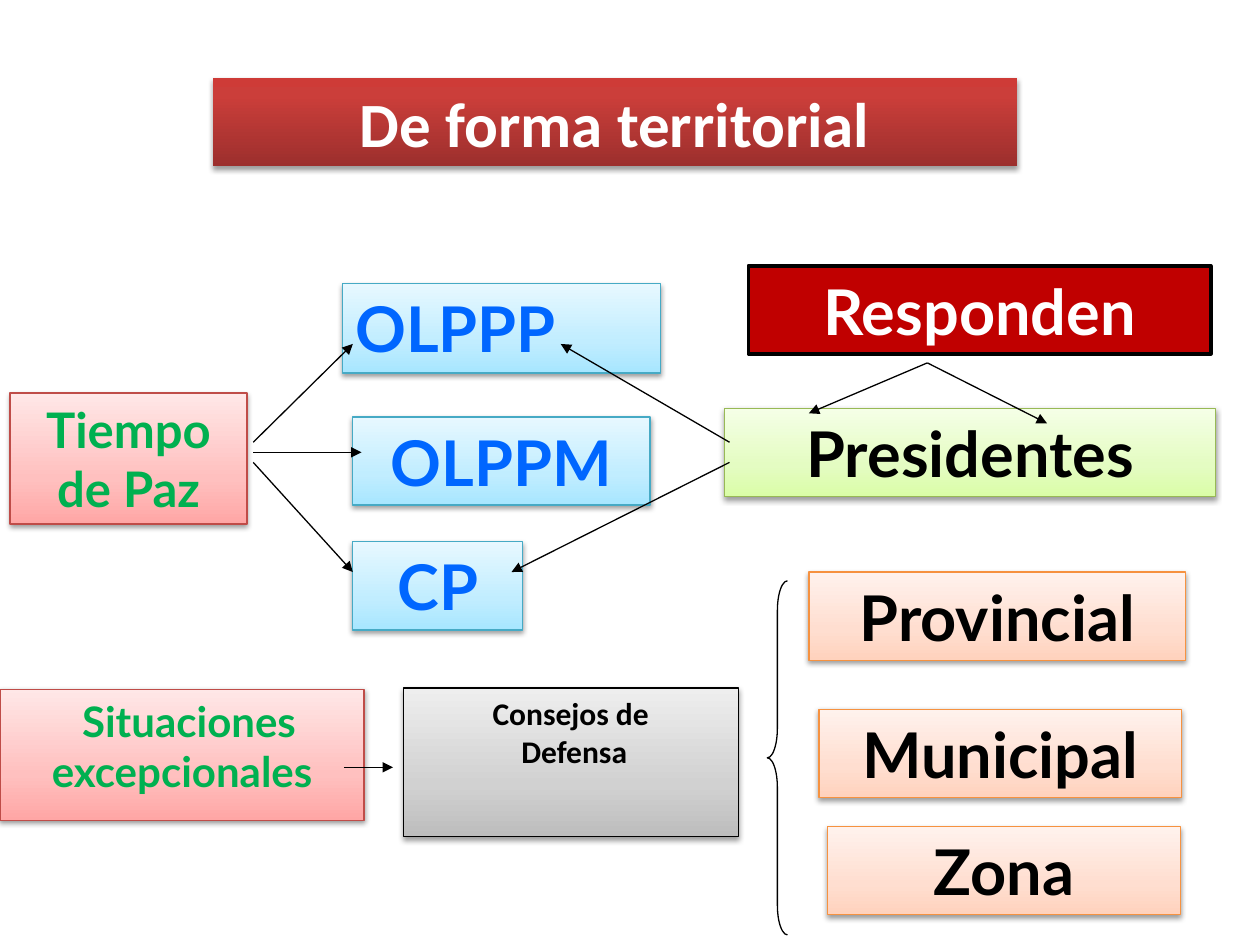
from lxml import etree
from pptx import Presentation
from pptx.dml.color import RGBColor
from pptx.enum.shapes import MSO_CONNECTOR, MSO_SHAPE
from pptx.enum.text import MSO_ANCHOR, PP_ALIGN
from pptx.oxml.ns import qn
from pptx.util import Inches, Pt

RECT, BRACE = MSO_SHAPE.RECTANGLE, MSO_SHAPE.LEFT_BRACE
STRAIGHT = MSO_CONNECTOR.STRAIGHT
CENTER, LEFT = PP_ALIGN.CENTER, PP_ALIGN.LEFT
TOP, MIDDLE = MSO_ANCHOR.TOP, MSO_ANCHOR.MIDDLE

COLS, ROWS = 100, 75
WIDTH, HEIGHT = Inches(10), Inches(7.5)

THEME = {
    "ink": "000000",
    "thin": 0.75,
    "sizes": {"big": 36, "medium": 28, "small": 24, "note": 18},
    "shadow": {"blur": 3.1, "dist": 1.6, "alpha": 38},
    "styles": {
        "title": {"stops": [(0, "9C2F2D"), (80, "CB3E3A"), (100, "CE3B37")],
                  "line": None, "text": "FFFFFF", "font": "Calibri"},
        "time": {"stops": [(0, "FFA6A5"), (35, "FFC0BF"), (100, "FFE7E7")],
                 "line": "BF4C48", "text": "00B050", "font": "Lato"},
        "organ": {"stops": [(0, "A7E6FF"), (35, "C1EDFF"), (100, "E7F8FF")],
                  "line": "46AAC5", "text": "0066FF", "font": "Lato"},
        "head": {"stops": [(0, "DAFDA7"), (35, "E4FCC2"), (100, "F5FFE7")],
                 "line": "98B955", "text": "000000", "font": "Lato"},
        "council": {"stops": [(0, "BDBDBD"), (35, "D1D1D1"), (100, "EEEEEE")],
                    "line": "000000", "text": "000000", "font": "Calibri"},
        "level": {"stops": [(0, "FFD2BD"), (35, "FFDED0"), (100, "FFF2ED")],
                  "line": "F69240", "text": "000000", "font": "Lato"},
        "answer": {"solid": "C00000", "line": "000000", "weight": 2,
                   "text": "FFFFFF", "font": "Lato", "anchor": MIDDLE},
    },
}

BOXES = [
    ("De forma territorial", "title", "big", (16.9, 6.2, 63.8, 7)),
    ("Tiempo\nde Paz", "time", "medium", (0.8, 31.2, 18.8, 10.4)),
    ("OLPPP", "organ", "big", (27.2, 22.5, 25.2, 7.1)),
    ("OLPPM", "organ", "big", (28, 33.1, 23.6, 7)),
    ("CP", "organ", "big", (28, 43, 13.5, 7)),
    ("Presidentes", "head", "big", (57.5, 32.4, 39, 7)),
    ("Situaciones\nexcepcionales", "time", "small", (0, 54.7, 28.9, 10.4)),
    ("Consejos de\n Defensa", "council", "note", (32, 54.6, 26.6, 11.8)),
    ("Provincial", "level", "big", (64.2, 45.4, 29.9, 7)),
    ("Municipal", "level", "big", (65, 56.3, 28.8, 7)),
    ("Zona", "level", "big", (65.7, 65.6, 28, 7)),
]
ANSWER = ("Responden", "answer", "big", (59.4, 21.1, 36.7, 7))
LEFT_ALIGNED = {"OLPPP"}
INDENTS = {"Situaciones": 1.1}

ARROWS = [
    ((20.1, 35.1), [(28, 27.3)]),
    ((20.1, 35.9), [(28.7, 35.9)]),
    ((20.1, 36.7), [(28, 45.4)]),
    ((57.9, 35.1), [(44.5, 27.3)]),
    ((57.9, 36.7), [(40.6, 45.4)]),
    ((27.3, 60.9), [(31.2, 60.9)]),
    ((73.6, 28.8), [(64.2, 32.8), (83.1, 33.6)]),
]
LEVEL_BRACE = (60.9, 46.1, 1.6, 28.1)


def rgb(value):
    return RGBColor.from_string(value)


def x(col):
    return round(WIDTH * col / COLS)


def y(row):
    return round(HEIGHT * row / ROWS)


def add_cell_shape(slide, kind, cell):
    col, row, cols, rows = cell
    sp = slide.shapes.add_shape(kind, x(col), y(row), x(cols), y(rows))
    sp.shadow.inherit = False
    return sp


def add_color(parent, tag, color, **attrs):
    node = etree.SubElement(parent, qn(tag), **attrs)
    return etree.SubElement(node, qn("a:srgbClr"), val=color)


def fill_gradient(sp, stops):
    sp.fill.gradient()
    sp.fill.gradient_angle = 90
    stop_list = sp._element.spPr.find(".//" + qn("a:gsLst"))
    for stop in list(stop_list):
        stop_list.remove(stop)
    for pos, color in stops:
        add_color(stop_list, "a:gs", color, pos=str(pos * 1000))


def add_shadow(sp):
    spec_ = THEME["shadow"]
    effects = sp._element.spPr.find(qn("a:effectLst"))
    color = add_color(effects, "a:outerShdw", THEME["ink"],
                      blurRad=str(Pt(spec_["blur"])), dist=str(Pt(spec_["dist"])),
                      dir="5400000", rotWithShape="0")
    etree.SubElement(color, qn("a:alpha"), val=str(spec_["alpha"] * 1000))


def set_line(line, color, weight=THEME["thin"]):
    if color is None:
        line.fill.background()
        return
    line.color.rgb = rgb(color)
    line.width = Pt(weight)


def add_box(slide, text, style_name, size, cell):
    style = THEME["styles"][style_name]
    sp = add_cell_shape(slide, RECT, cell)
    if "stops" in style:
        fill_gradient(sp, style["stops"])
        add_shadow(sp)
    else:
        sp.fill.solid()
        sp.fill.fore_color.rgb = rgb(style["solid"])
    set_line(sp.line, style["line"], style.get("weight", THEME["thin"]))
    tf = sp.text_frame
    tf.text = text
    tf.word_wrap = True
    tf.vertical_anchor = style.get("anchor", TOP)
    for p in tf.paragraphs:
        p.alignment = LEFT if p.text in LEFT_ALIGNED else CENTER
        if p.text in INDENTS:
            p._p.get_or_add_pPr().set("marL", str(x(INDENTS[p.text])))
        for r in p.runs:
            r.font.name = style["font"]
            r.font.size = Pt(THEME["sizes"][size])
            r.font.bold = True
            r.font.color.rgb = rgb(style["text"])


def add_arrow(slide, start, end):
    line = slide.shapes.add_connector(STRAIGHT, x(start[0]), y(start[1]),
                                      x(end[0]), y(end[1]))
    set_line(line.line, THEME["ink"])
    etree.SubElement(line.line._get_or_add_ln(), qn("a:tailEnd"), type="triangle")
    etree.SubElement(line._element.spPr, qn("a:effectLst"))


def add_brace(slide, cell):
    sp = add_cell_shape(slide, BRACE, cell)
    sp.adjustments[0] = 1.48
    sp.adjustments[1] = 0.5
    sp.fill.background()
    set_line(sp.line, THEME["ink"])


def main():
    prs = Presentation()
    prs.slide_width, prs.slide_height = WIDTH, HEIGHT
    slide = prs.slides.add_slide(prs.slide_layouts[6])
    for box in BOXES:
        add_box(slide, *box)
    for start, ends in ARROWS:
        for end in ends:
            add_arrow(slide, start, end)
    add_brace(slide, LEVEL_BRACE)
    add_box(slide, *ANSWER)
    prs.save("out.pptx")


if __name__ == "__main__":
    main()
